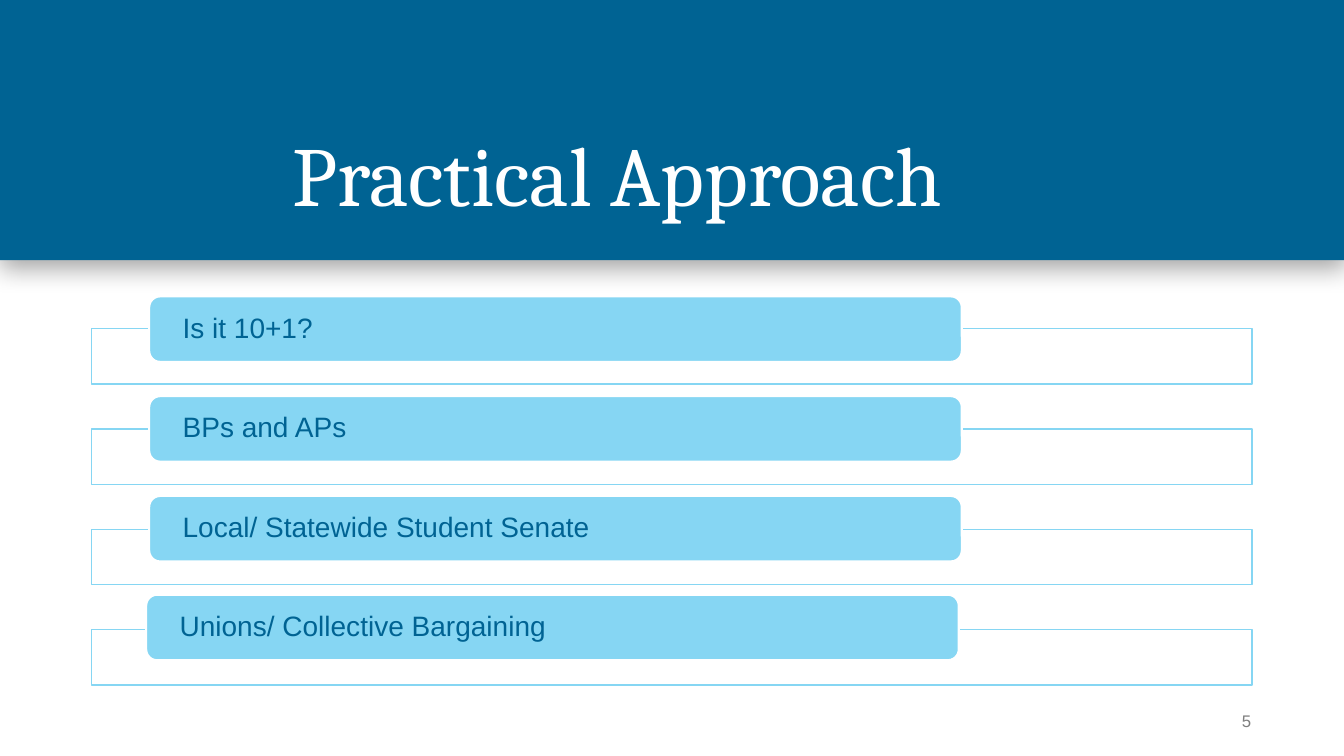
from lxml import etree
from pptx import Presentation
from pptx.dml.color import RGBColor
from pptx.enum.shapes import MSO_SHAPE as Shape
from pptx.enum.text import MSO_ANCHOR as Anchor, MSO_AUTO_SIZE as AutoSize, PP_ALIGN as Align
from pptx.oxml import parse_xml
from pptx.oxml.ns import nsdecls, qn
from pptx.util import Inches, Pt

TITLE = "Practical Approach"
PAGE_NUMBER = "5"
# Label, left edge and top of its rounded bar
TOPICS = [
    ("Is it 10+1?", 1.48, 2.94),
    ("BPs and APs", 1.48, 3.93),
    ("Local/ Statewide Student Senate", 1.48, 4.92),
    ("Unions/ Collective Bargaining", 1.45, 5.9),
]
COLORS = {"navy": "006393", "sky": "86D6F3", "white": "FFFFFF", "gray": "7F7F7F"}
FRAME_TOP, FRAME_STEP = 3.26, 0.995


def color(name):
    return RGBColor.from_string(COLORS[name])


def write(box, text, *, font="Arial", size=20, ink="navy", align=Align.LEFT,
          anchor=Anchor.MIDDLE, insets=(0.1, 0.05, 0.1, 0.05), spacing=None):
    frame = box.text_frame
    frame.word_wrap = True
    frame.auto_size = AutoSize.NONE
    frame.vertical_anchor = anchor
    (frame.margin_left, frame.margin_top,
     frame.margin_right, frame.margin_bottom) = map(Inches, insets)
    para = frame.paragraphs[0]
    para.alignment = align
    para.line_spacing = spacing
    span = para.add_run()
    span.text = text
    span.font.name = font
    span.font.size = Pt(size)
    span.font.color.rgb = color(ink)


def add_block(page, kind, at, fill, line=None, width=1):
    block = page.shapes.add_shape(kind, *map(Inches, at))
    block.shadow.inherit = False
    block.fill.solid()
    block.fill.fore_color.rgb = color(fill)
    if line:
        block.line.color.rgb = color(line)
        block.line.width = Pt(width)
    else:
        block.line.fill.background()
    return block


def add_drop_shadow(block):
    effects = block.element.spPr.find(qn("a:effectLst"))
    effects.append(parse_xml(
        f'<a:outerShdw {nsdecls("a")} blurRad="{Pt(18)}" dist="{Pt(5)}" dir="5400000" '
        'algn="t" rotWithShape="0"><a:srgbClr val="000000"><a:alpha val="35000"/>'
        '</a:srgbClr></a:outerShdw>'))


def set_opacity(block, percent):
    fill_color = block.element.spPr.find(qn("a:solidFill")).find(qn("a:srgbClr"))
    etree.SubElement(fill_color, qn("a:alpha")).set("val", str(percent * 1000))


def main():
    deck = Presentation()
    deck.slide_width, deck.slide_height = Inches(13.33), Inches(7.5)
    page = deck.slides.add_slide(deck.slide_layouts[5])

    band = add_block(page, Shape.RECTANGLE, (0, 0, 13.33, 2.58), "navy")
    add_drop_shadow(band)
    title = page.shapes.title
    band.element.addnext(title.element)  # the title sits in front of the band
    title.left, title.top, title.width, title.height = map(Inches, (2.8, 0.44, 9.62, 1.84))
    write(title, TITLE, font="Cambria", size=60, ink="white", anchor=Anchor.BOTTOM, spacing=0.9)

    number = page.shapes.add_textbox(*map(Inches, (11.41, 6.95, 1, 0.4)))
    write(number, PAGE_NUMBER, size=12, ink="gray", align=Align.RIGHT,
          insets=(0.1, 0.05, 0, 0.05))

    for row, (label, left, top) in enumerate(TOPICS):
        frame_top = FRAME_TOP + row * FRAME_STEP
        frame = add_block(page, Shape.RECTANGLE, (0.91, frame_top, 11.51, 0.55), "white", "sky")
        set_opacity(frame, 90)
        bar = add_block(page, Shape.ROUNDED_RECTANGLE, (left, top, 8.06, 0.65),
                        "sky", "white", 1.5)
        write(bar, label, insets=(0.3, 0, 0.3, 0), spacing=0.9)

    deck.save("out.pptx")


if __name__ == "__main__":
    main()
